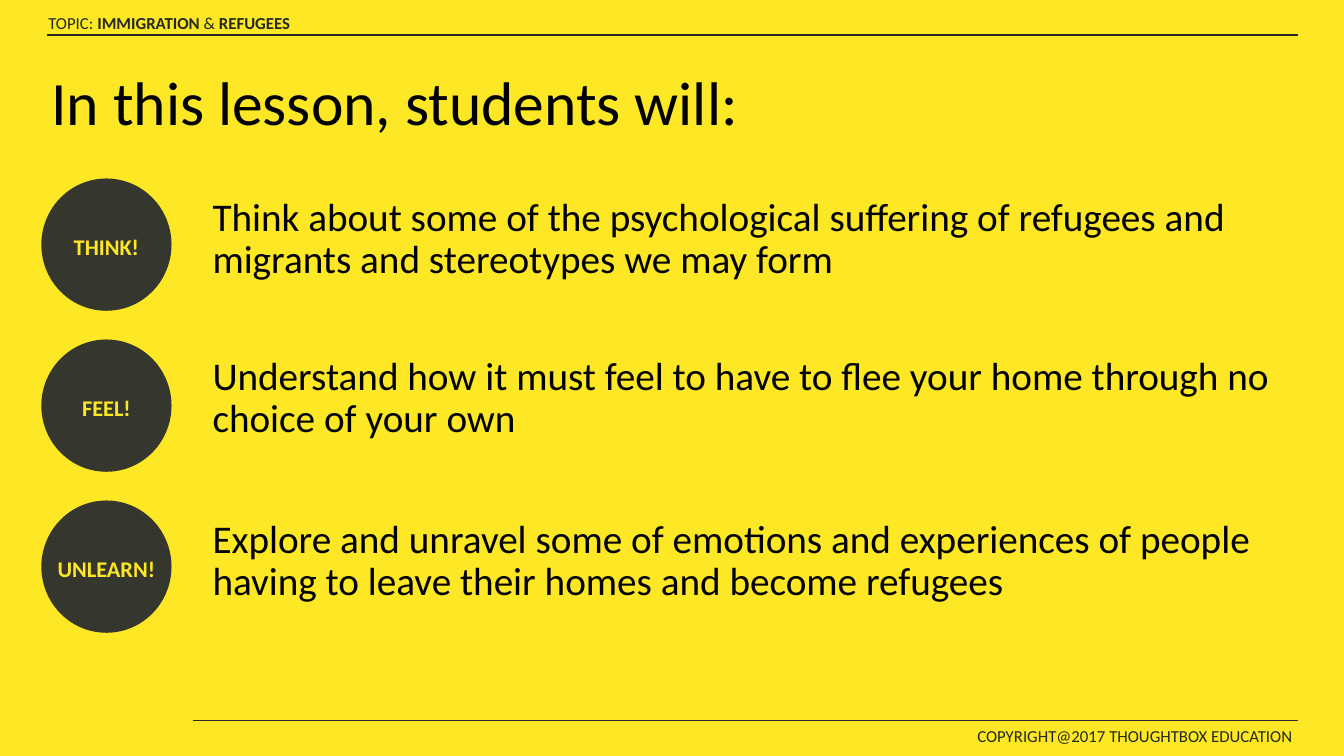
from pptx import Presentation
from pptx.dml.color import RGBColor
from pptx.enum import shapes as sh, text as tx
from pptx.oxml import ns, xmlchemy as xc
from pptx.util import Pt

YELLOW = RGBColor(0xFE, 0xE7, 0x25)
DARK = RGBColor(0x35, 0x37, 0x2F)
INK = RGBColor(0x25, 0x28, 0x23)
BLACK = RGBColor(0, 0, 0)
FONT = "Calibri"

AIMS = [
    # label, aim, space before the aim
    ("THINK!", "Think about some of the psychological suffering of refugees "
     "and migrants and stereotypes we may form", 0),
    ("FEEL!", "Understand how it must feel to have to flee your home "
     "through no choice of your own", 53),
    ("UNLEARN!", "Explore and unravel some of emotions and experiences of "
     "people having to leave their homes and become refugees", 56),
]


def add_run(para, words, size, color, bold=False):
    run = para.add_run()
    run.text = words
    font = run.font
    font.name, font.size, font.bold = FONT, Pt(size), bold
    font.color.rgb = color


def add_box(slide, left, top, width, height, wrap=True):
    box = slide.shapes.add_textbox(Pt(left), Pt(top), Pt(width), Pt(height))
    box.text_frame.word_wrap = wrap
    return box.text_frame


def add_rule(slide, left, right, y):
    rule = slide.shapes.add_connector(
        sh.MSO_CONNECTOR.STRAIGHT, Pt(left), Pt(y), Pt(right), Pt(y))
    rule.line.color.rgb = INK
    rule.line.width = Pt(1)
    rule._element.spPr.append(xc.OxmlElement("a:effectLst"))


def add_disc(slide, top, label):
    disc = slide.shapes.add_shape(
        sh.MSO_SHAPE.OVAL, Pt(29.5), Pt(top), Pt(93), Pt(94.5))
    disc.shadow.inherit = False
    disc.fill.solid()
    disc.fill.fore_color.rgb = DARK
    disc.line.fill.background()
    frame = disc.text_frame
    frame.word_wrap = False
    frame.vertical_anchor = tx.MSO_ANCHOR.MIDDLE
    para = frame.paragraphs[0]
    para.alignment = tx.PP_ALIGN.CENTER
    para.line_spacing = 1.15
    add_run(para, label, 16, YELLOW, True)


def set_title(slide, words):
    title = slide.shapes.title
    title.left, title.top = Pt(29.5), Pt(23)
    title.width, title.height = Pt(828), Pt(104.4)
    frame = title.text_frame
    frame.word_wrap = True
    frame.auto_size = tx.MSO_AUTO_SIZE.NONE
    frame.vertical_anchor = tx.MSO_ANCHOR.MIDDLE
    para = frame.paragraphs[0]
    para.alignment = tx.PP_ALIGN.LEFT
    para.line_spacing = 0.9
    add_run(para, words, 44, BLACK)


def add_aims(slide):
    frame = add_box(slide, 144.7, 137.5, 785.5, 342.7)
    for i, (label, aim, gap) in enumerate(AIMS):
        para = frame.add_paragraph() if i else frame.paragraphs[0]
        para.line_spacing = 0.9
        if gap:
            para.space_before = Pt(gap)
        add_run(para, aim, 28, BLACK)
        add_disc(slide, 127.5 + 115 * i, label)


def main():
    deck = Presentation()
    deck.slide_width, deck.slide_height = Pt(960), Pt(540)
    slide = deck.slides.add_slide(deck.slide_layouts[5])
    slide.background.fill.solid()
    slide.background.fill.fore_color.rgb = YELLOW

    # Header and footer
    topic = add_box(slide, 27.4, 5.8, 193.7, 21.8, wrap=False).paragraphs[0]
    for words, bold in [("TOPIC: ", False), ("IMMIGRATION ", True),
                        ("&", False), (" REFUGEES", True)]:
        add_run(topic, words, 12, INK, bold)
    add_rule(slide, 33.8, 927.4, 25)
    foot = add_box(slide, 691, 515, 244.8, 22).paragraphs[0]
    add_run(foot, "COPYRIGHT@2017 THOUGHTBOX EDUCATION", 12, INK)
    add_rule(slide, 138.2, 927.4, 514.8)

    # Title and lesson aims
    set_title(slide, "In this lesson, students will:")
    add_aims(slide)
    deck.save("out.pptx")


if __name__ == "__main__":
    main()
